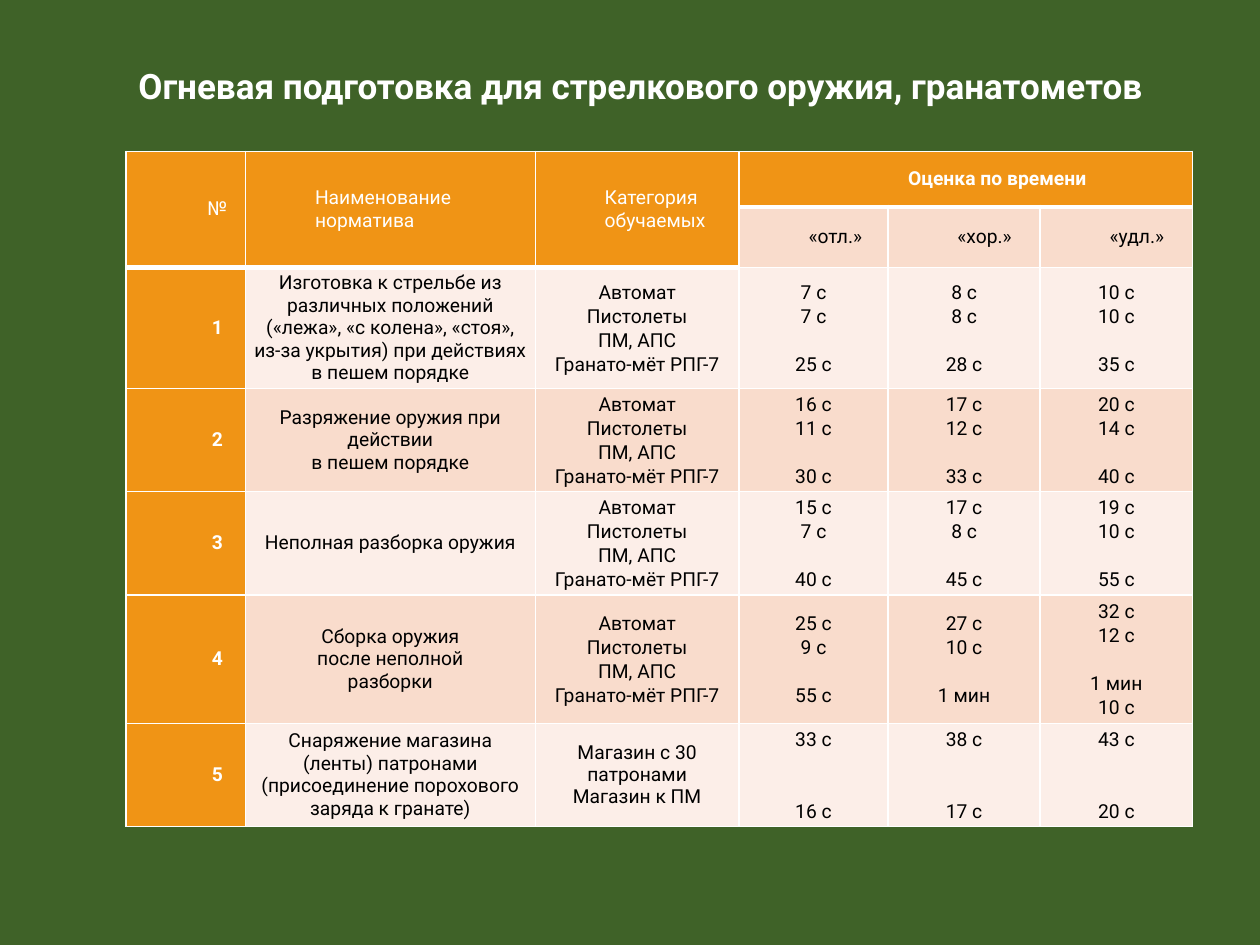
from dataclasses import dataclass

import lxml.etree
import pptx
import pptx.dml.color
import pptx.enum.text
import pptx.oxml.ns
import pptx.table
import pptx.text.text
import pptx.util

Cm = pptx.util.Cm
Pt = pptx.util.Pt
ALIGN = pptx.enum.text.PP_ALIGN
MIDDLE = pptx.enum.text.MSO_ANCHOR.MIDDLE

FONT = "Roboto"
GREEN, ORANGE, WHITE, BLACK = "3F6228", "F09415", "FFFFFF", "000000"
DARK_BAND, LIGHT_BAND = "F9DCCC", "FCEEE8"
INDENT = Cm(1.27)
GAP = None  # a line left free between two values
GAP_POINTS = 13.8
LOOSE = 1.07
THIN, THICK = 1, 3

COLUMN_WIDTHS = (2.41, 5.84, 4.11, 3.0, 3.07, 3.07)
ROW_HEIGHTS = (1.12, 1.22, 2.44, 2.08, 2.08, 2.59, 2.08)
WEAPONS = ("Автомат", "Пистолеты", "ПМ, АПС", "Гранато-мёт РПГ-7")


@dataclass(frozen=True)
class Style:
    fill: str
    color: str = BLACK
    bold: bool = False
    align: ALIGN = ALIGN.CENTER
    indent: int = 0
    spacing: float = 1.0
    top: int = THIN
    bottom: int = THIN


@dataclass(frozen=True)
class Standard:
    name: tuple
    times: tuple
    category: tuple = WEAPONS
    category_spacing: float = LOOSE


STANDARDS = (
    Standard(
        ("Изготовка к стрельбе из различных положений («лежа», «с колена», "
         "«стоя», из-за укрытия) при действиях в пешем порядке",),
        (("7 с", "7 с", GAP, "25 с"),
         ("8 с", "8 с", GAP, "28 с"),
         ("10 с", "10 с", GAP, "35 с")),
    ),
    Standard(
        ("Разряжение оружия при действии", "в пешем порядке"),
        (("16 с", "11 с", GAP, "30 с"),
         ("17 с", "12 с", GAP, "33 с"),
         ("20 с", "14 с", GAP, "40 с")),
    ),
    Standard(
        ("Неполная разборка оружия",),
        (("15 с", "7 с", GAP, "40 с"),
         ("17 с", "8 с", GAP, "45 с"),
         ("19 с", "10 с", GAP, "55 с")),
    ),
    Standard(
        ("Сборка оружия", "после неполной", "разборки"),
        (("25 с", "9 с", GAP, "55 с"),
         ("27 с", "10 с", GAP, "1 мин"),
         ("32 с", "12 с", GAP, "1 мин", "10 с")),
    ),
    Standard(
        ("Снаряжение магазина (ленты) патронами "
         "(присоединение порохового заряда к гранате)",),
        (("33 с", GAP, GAP, "16 с"),
         ("38 с", GAP, GAP, "17 с"),
         ("43 с", GAP, GAP, "20 с")),
        ("Магазин с 30 патронами", "Магазин к ПМ"),
        1.0,
    ),
)


def rgb(value: str) -> pptx.dml.color.RGBColor:
    return pptx.dml.color.RGBColor.from_string(value)


def set_attributes(target: object, values: dict) -> None:
    for name, value in values.items():
        setattr(target, name, value)


def add_run(paragraph: pptx.text.text._Paragraph, text: str, size: float,
            color: str, bold: bool) -> None:
    run = paragraph.add_run()
    run.text = text
    set_attributes(run.font, {"name": FONT, "size": Pt(size), "bold": bold})
    run.font.color.rgb = rgb(color)


def set_borders(cell: pptx.table._Cell, top: int, bottom: int) -> None:
    properties = cell._tc.get_or_add_tcPr()
    qn = pptx.oxml.ns.qn
    for side, points in {"L": THIN, "R": THIN, "T": top, "B": bottom}.items():
        line = lxml.etree.SubElement(properties, qn(f"a:ln{side}"), w=str(Pt(points)))
        fill = lxml.etree.SubElement(line, qn("a:solidFill"))
        lxml.etree.SubElement(fill, qn("a:srgbClr"), val=WHITE)


def format_cell(cell: pptx.table._Cell, style: Style) -> None:
    set_borders(cell, style.top, style.bottom)
    cell.fill.solid()
    cell.fill.fore_color.rgb = rgb(style.fill)
    set_attributes(cell, {
        "margin_left": Cm(0.13), "margin_right": Cm(0.13),
        "margin_top": 0, "margin_bottom": 0, "vertical_anchor": MIDDLE,
    })


def write_cell(cell: pptx.table._Cell, lines: tuple, style: Style) -> None:
    """Fill a cell; each GAP becomes space before the next line."""
    format_cell(cell, style)
    frame = cell.text_frame
    gaps = 0
    for index, text in enumerate(lines):
        if text is GAP:
            gaps += 1
            continue
        paragraph = frame.add_paragraph() if index else frame.paragraphs[0]
        set_attributes(paragraph, {
            "alignment": style.align, "line_spacing": style.spacing,
            "space_before": Pt(gaps * GAP_POINTS),
        })
        paragraph._p.get_or_add_pPr().set("marL", str(style.indent))
        add_run(paragraph, text, 11, style.color, style.bold)
        gaps = 0


def write_header(table: pptx.table.Table) -> None:
    titles = (("№", ALIGN.CENTER), ("Наименование норматива", ALIGN.LEFT),
              ("Категория обучаемых", ALIGN.LEFT))
    for column, (title, align) in enumerate(titles):
        style = Style(ORANGE, WHITE, align=align, indent=INDENT, bottom=THICK)
        table.cell(0, column).merge(table.cell(1, column))
        write_cell(table.cell(0, column), (title,), style)
        format_cell(table.cell(1, column), style)

    style = Style(ORANGE, WHITE, True, indent=INDENT, bottom=THICK)
    table.cell(0, 3).merge(table.cell(0, 5))
    write_cell(table.cell(0, 3), ("Оценка по времени",), style)
    for column, grade in enumerate(("«отл.»", "«хор.»", "«удл.»"), start=3):
        if column > 3:
            format_cell(table.cell(0, column), style)
        write_cell(table.cell(1, column), (grade,),
                   Style(DARK_BAND, align=ALIGN.LEFT, indent=INDENT, top=THICK))


def write_standard(table: pptx.table.Table, number: int, standard: Standard) -> None:
    row = number + 1
    band = LIGHT_BAND if number % 2 else DARK_BAND
    top = THICK if number == 1 else THIN
    write_cell(table.cell(row, 0), (str(number),),
               Style(ORANGE, WHITE, True, indent=INDENT, top=top))
    write_cell(table.cell(row, 1), standard.name, Style(band, top=top))
    write_cell(table.cell(row, 2), standard.category,
               Style(band, spacing=standard.category_spacing, top=top))
    for column, times in enumerate(standard.times, start=3):
        write_cell(table.cell(row, column), times, Style(band, spacing=LOOSE))


def main() -> None:
    presentation = pptx.Presentation()
    set_attributes(presentation, {"slide_width": Cm(25.4), "slide_height": Cm(19.05)})
    slide = presentation.slides.add_slide(presentation.slide_layouts[6])
    slide.background.fill.solid()
    slide.background.fill.fore_color.rgb = rgb(GREEN)

    table = slide.shapes.add_table(
        len(ROW_HEIGHTS), len(COLUMN_WIDTHS), Cm(2.54), Cm(3.05),
        Cm(sum(COLUMN_WIDTHS)), Cm(sum(ROW_HEIGHTS))).table
    for column, width in zip(table.columns, COLUMN_WIDTHS):
        column.width = Cm(width)
    for row, height in zip(table.rows, ROW_HEIGHTS):
        row.height = Cm(height)
    write_header(table)
    for number, standard in enumerate(STANDARDS, start=1):
        write_standard(table, number, standard)

    title = slide.shapes.add_textbox(Cm(2.54), Cm(1.17), Cm(21.49), Cm(1.88))
    title.text_frame.word_wrap = True
    add_run(title.text_frame.paragraphs[0],
            "Огневая подготовка для стрелкового оружия, гранатометов", 20, WHITE, True)
    presentation.save("out.pptx")


if __name__ == "__main__":
    main()
